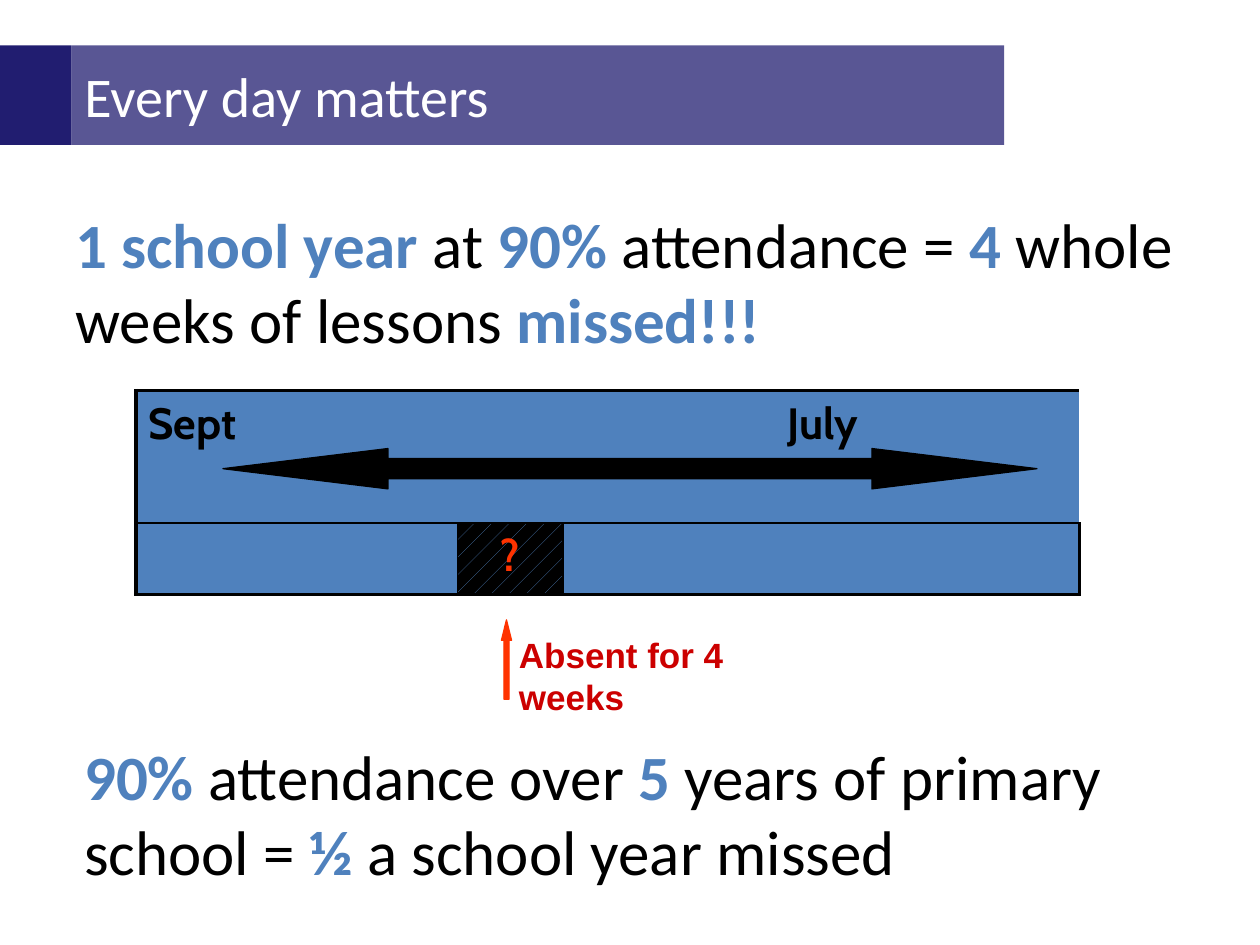
from lxml.etree import SubElement
from pptx import Presentation
from pptx.dml.color import RGBColor
from pptx.enum.dml import MSO_PATTERN
from pptx.enum.shapes import MSO_SHAPE
from pptx.enum.text import MSO_ANCHOR, PP_ALIGN
from pptx.oxml import parse_xml
from pptx.oxml.ns import nsdecls, qn
from pptx.util import Inches, Pt

BLUE, BLACK, NAVY, RED = "4F81BD", "000000", "211D70", "FF3300"


def tint(color):
    return RGBColor.from_string(color)


def style(para, name, size, color, bold):
    font = para.font
    font.name, font.size, font.bold = name, Pt(size), bold
    font.color.rgb = tint(color)


prs = Presentation()
prs.slide_width, prs.slide_height = Inches(10), Inches(7.5)
slide = prs.slides.add_slide(prs.slide_layouts[5])
shapes = slide.shapes

title = shapes.title
title.left, title.top = Inches(0.57), Inches(0.36)
title.width, title.height = Inches(7.4), Inches(0.79)
title.fill.solid()
title.fill.fore_color.rgb = tint("595694")
title.text = "Every day matters"
title.text_frame.vertical_anchor = MSO_ANCHOR.MIDDLE
head = title.text_frame.paragraphs[0]
head.alignment = PP_ALIGN.LEFT
style(head, "Calibri", 32, "FFFFFF", False)

texts = [
    ((0.5, 1.58, 9.07, 1.51),
     ["1 school year ", "at ", "90% ", "attendance = ", "4 ",
      "whole weeks of lessons ", "missed!!!"]),
    ((0.57, 5.8, 8.92, 1.31),
     ["90% ", "attendance over ", "5", " years of primary school = ",
      "½ ", "a school year missed"]),
]
for place, parts in texts:
    box = shapes.add_textbox(*map(Inches, place))
    box.text_frame.word_wrap = True
    para = box.text_frame.paragraphs[0]
    style(para, "Calibri", 36, BLACK, False)
    for i, part in enumerate(parts):
        run = para.add_run()
        run.text = part
        if i % 2 == 0:
            run.font.bold = True
            run.font.color.rgb = tint(BLUE)

table = shapes.add_table(2, 3, Inches(1.08), Inches(3.1),
                         Inches(7.49), Inches(1.62)).table
for col, width in zip(table.columns, (2.55, 0.84, 4.1)):
    col.width = Inches(width)
for row, height in zip(table.rows, (1.05, 0.57)):
    row.height = Inches(height)
table.cell(0, 0).merge(table.cell(0, 2))

for r in range(2):
    for c in range(3):
        cell = table.cell(r, c)
        if (r, c) == (1, 1):
            cell.fill.patterned()
            cell.fill.pattern = MSO_PATTERN.PERCENT_5
            cell.fill.fore_color.rgb = tint(BLUE)
            cell.fill.back_color.rgb = tint(BLACK)
        else:
            cell.fill.solid()
            cell.fill.fore_color.rgb = tint(BLUE)
        outer = {"L": c == 0, "R": c == 2, "T": r == 0, "B": r == 1}
        props = cell._tc.get_or_add_tcPr()
        for i, (side, edge) in enumerate(outer.items()):
            if r == 0 and side in "LR" and not edge:
                continue
            width = Pt(2.25 if edge else 1)
            line = parse_xml(
                f'<a:ln{side} {nsdecls("a")} w="{width}"><a:solidFill>'
                f'<a:srgbClr val="{BLACK}"/></a:solidFill></a:ln{side}>')
            props.insert(i, line)

for r, c, words, color in [(0, 0, "Sept\tJuly", BLACK), (1, 1, "?", RED)]:
    cell = table.cell(r, c)
    cell.text = words
    style(cell.text_frame.paragraphs[0], "Cabin", 25, color, True)
table.cell(1, 1).text_frame.paragraphs[0].alignment = PP_ALIGN.CENTER
months = table.cell(0, 0).text_frame.paragraphs[0]
tabs = parse_xml(f'<a:tabLst {nsdecls("a")}/>')
SubElement(tabs, qn("a:tab"), pos=str(Inches(5.07)), algn="l")
months._p.get_or_add_pPr().insert(0, tabs)

note = shapes.add_textbox(Inches(4.02), Inches(4.98), Inches(1.95), Inches(0.75))
note.text_frame.word_wrap = True
note.text_frame.text = "Absent for 4 weeks"
style(note.text_frame.paragraphs[0], "Arial", 20, "CC0000", True)

marks = [
    (MSO_SHAPE.UP_ARROW, (3.98, 4.92, 0.08, 0.63), RED, (0.5, 2.02)),
    (MSO_SHAPE.LEFT_RIGHT_ARROW, (1.77, 3.56, 6.46, 0.32), BLACK, (0.5, 4.09)),
    (MSO_SHAPE.RECTANGLE, (0, 0.36, 0.57, 0.79), NAVY, ()),
]
for kind, place, color, adjust in marks:
    mark = shapes.add_shape(kind, *map(Inches, place))
    mark.shadow.inherit = False
    mark.fill.solid()
    mark.fill.fore_color.rgb = tint(color)
    if adjust:
        mark.line.color.rgb = tint(color)
        mark.line.width = Pt(0.75)
    else:
        mark.line.fill.background()
    for i, value in enumerate(adjust):
        mark.adjustments[i] = value

prs.save("out.pptx")
